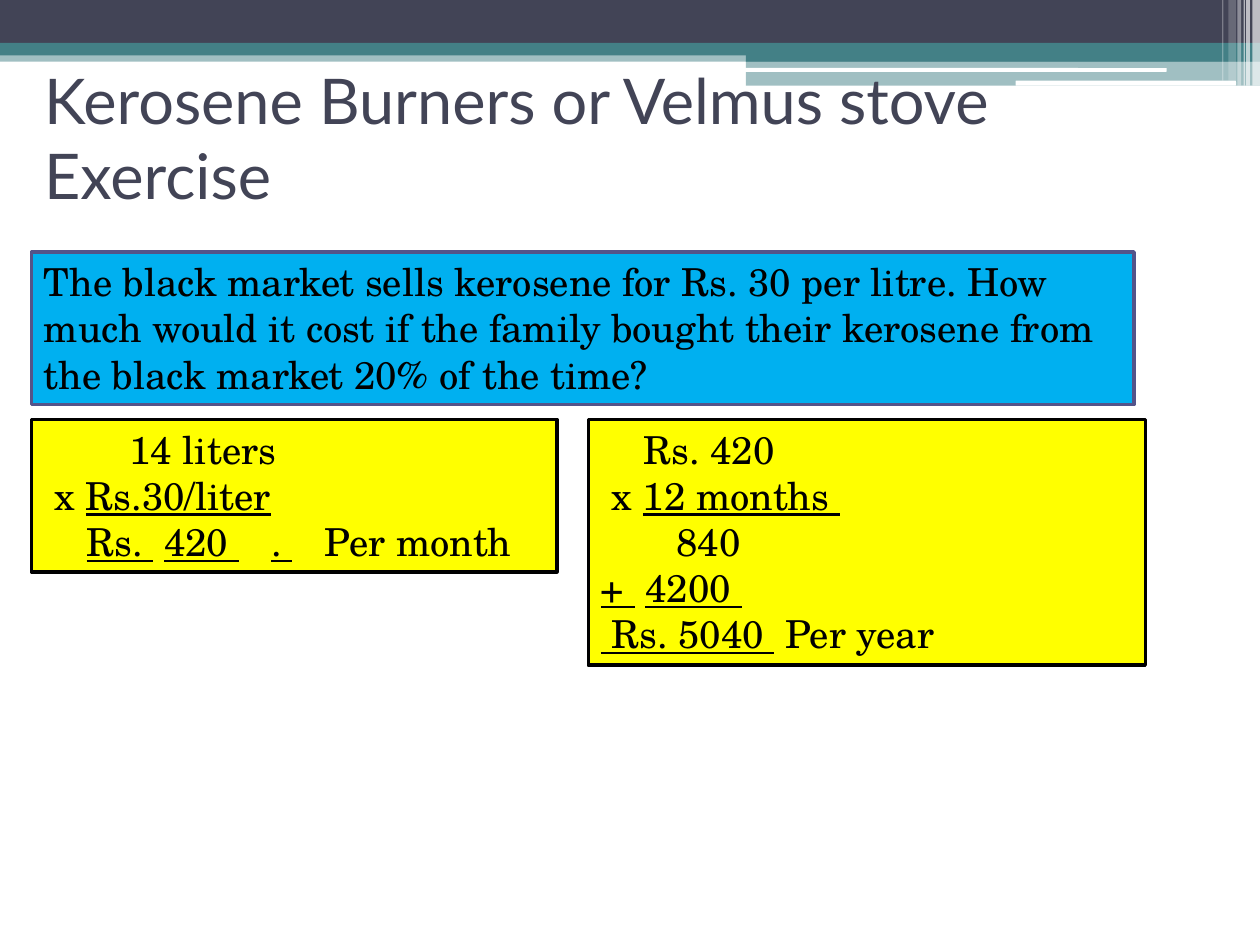
from pptx import Presentation
from pptx.dml.color import RGBColor
from pptx.enum.shapes import MSO_SHAPE
from pptx.enum.text import MSO_ANCHOR, MSO_AUTO_SIZE, PP_ALIGN
from pptx.oxml.ns import qn
from pptx.util import Inches, Pt
from lxml.etree import SubElement

WIDTH, HEIGHT = 10, 7.5
MARGIN = WIDTH / 40
NAVY, TEAL, WHITE, BLACK = "424456", "438086", "FFFFFF", "000000"
BLUE, INDIGO, YELLOW = "00B0F0", "53548A", "FFFF00"

# left, top, width, height, colour, opacity in percent
BANDS = [
    (0, 0.4, 10, 0.09, TEAL, 50),
    (0, 0, 10, 0.34, NAVY, 100),
    (0, 0.34, 10, 0.1, TEAL, 100),
    (5.92, 0.39, 4.08, 0.1, TEAL, 100),
    (5.92, 0.48, 4.08, 0.2, TEAL, 50),
]
WHITE_BARS = [(5.91, 0.54, 3.35, 0.03), (8.06, 0.64, 1.75, 0.04)]
# left, width, height, opacity in percent
STRIPES = [
    (9.94, 0.06, 0.68, 65), (9.89, 0.03, 0.68, 65), (9.87, 0.01, 0.68, 60),
    (9.82, 0.03, 0.68, 40), (9.75, 0.06, 0.64, 20), (9.7, 0.01, 0.64, 30),
]

# Underlined gaps: one space widened by character spacing in points
GAP, WIDE_GAP = (" ", True, 6.1), (" ", True, 18.3)

# Each line: tab stops in inches, then (text, underlined[, spacing]) runs
QUESTION = [((), [("The black market sells kerosene for Rs. 30 per litre. "
                   "How much would it cost if the family bought their "
                   "kerosene from the black market 20% of the time?", False)])]
PER_MONTH = [
    ((0.68,), [("\t14 liters", False)]),
    ((), [(" x ", False), ("Rs.30/liter", True)]),
    ((0.34, 2.23), [("\t", False), ("Rs.", True), GAP, ("420", True),
                    WIDE_GAP, (". ", True), ("\tPer month", False)]),
]
PER_YEAR = [
    ((0.34,), [("\tRs. 420", False)]),
    ((), [(" x ", False), ("12 months ", True)]),
    ((0.6,), [("\t840", False)]),
    ((), [("+", True), GAP, ("4200 ", True)]),
    ((), [(" Rs. 5040", True), GAP, ("Per year", False)]),
]


def rgb(value):
    return RGBColor.from_string(value)


def add_text(p, text, font="TeX Gyre Schola", size=22, color=BLACK,
             underline=False, spacing=0):
    r = p.add_run()
    r.text = text
    r.font.name, r.font.size = font, Pt(size)
    r.font.color.rgb = rgb(color)
    if underline:
        r.font.underline = True
    if spacing:
        r._r.get_or_add_rPr().set("spc", str(round(spacing * 100)))


def add_block(s, left, top, width, height, fill, opacity=100, line=None,
              shape=MSO_SHAPE.RECTANGLE):
    sp = s.shapes.add_shape(shape, *map(Inches, (left, top, width, height)))
    sp.shadow.inherit = False
    sp.fill.solid()
    sp.fill.fore_color.rgb = rgb(fill)
    if opacity < 100:
        clr = sp.fill._xPr.find(qn("a:solidFill"))[0]
        SubElement(clr, qn("a:alpha"), val=str(opacity * 1000))
    if line:
        sp.line.color.rgb = rgb(line)
        sp.line.width = Pt(2)
    else:
        sp.line.fill.background()
    return sp


def set_tabs(p, stops):
    tabs = SubElement(p._p.get_or_add_pPr(), qn("a:tabLst"))
    for stop in stops:
        SubElement(tabs, qn("a:tab"), pos=str(Inches(stop)), algn="l")


def add_text_box(s, left, top, width, height, fill, line, lines):
    tf = add_block(s, left, top, width, height, fill, line=line).text_frame
    tf.word_wrap = True
    tf.auto_size = MSO_AUTO_SIZE.SHAPE_TO_FIT_TEXT
    tf.vertical_anchor = MSO_ANCHOR.TOP
    for i, (stops, runs) in enumerate(lines):
        p = tf.add_paragraph() if i else tf.paragraphs[0]
        p.alignment = PP_ALIGN.LEFT
        if stops:
            set_tabs(p, stops)
        for text, underline, *spacing in runs:
            add_text(p, text, underline=underline, spacing=sum(spacing))


def add_header(s):
    for band in BANDS:
        add_block(s, *band)
    for bar in WHITE_BARS:
        add_block(s, *bar, WHITE, shape=MSO_SHAPE.ROUNDED_RECTANGLE)
    for left, width, height, opacity in STRIPES:
        add_block(s, left, 0, width, height, WHITE, opacity)


def add_title(s, text):
    title = s.shapes.title
    title.left, title.top = Inches(MARGIN), Inches(0.5)
    title.width, title.height = Inches(9), Inches(1.17)
    s.shapes._spTree.append(title._element)  # in front of the header
    tf = title.text_frame
    tf.word_wrap = True
    tf.auto_size = MSO_AUTO_SIZE.NONE
    tf.vertical_anchor = MSO_ANCHOR.MIDDLE
    p = tf.paragraphs[0]
    p.alignment = PP_ALIGN.LEFT
    add_text(p, text, font="Lato", size=36, color=NAVY)


def main():
    prs = Presentation()
    prs.slide_width, prs.slide_height = Inches(WIDTH), Inches(HEIGHT)
    s = prs.slides.add_slide(prs.slide_layouts[5])
    add_header(s)
    add_title(s, "Kerosene Burners or Velmus stove Exercise")
    # Question above, the two calculations side by side below
    add_text_box(s, MARGIN, 2, 8.75, 1.21, BLUE, INDIGO, QUESTION)
    add_text_box(s, MARGIN, 3.33, 4.17, 1.21, YELLOW, BLACK, PER_MONTH)
    add_text_box(s, 4.67, 3.33, 4.42, 1.95, YELLOW, BLACK, PER_YEAR)
    prs.save("out.pptx")


if __name__ == "__main__":
    main()
